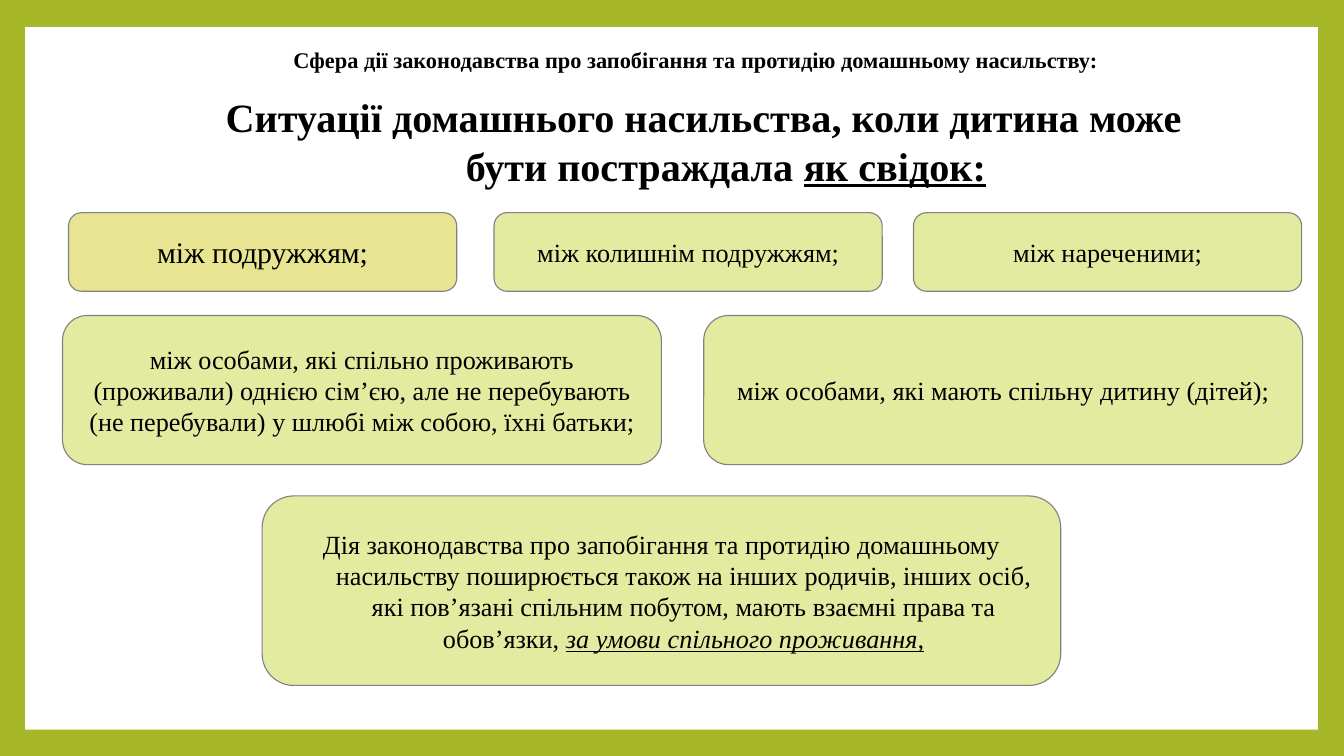
from pptx import Presentation
from pptx.dml.color import RGBColor
from pptx.enum.shapes import MSO_SHAPE
from pptx.enum.text import MSO_ANCHOR, PP_ALIGN
from pptx.util import Emu, Inches, Pt

# Content: each text is a list of (words, styles), b bold, i italic, u underlined
HEADINGS = [
    dict(text=[("Сфера дії законодавства про запобігання та протидію домашньому насильству:", "b")],
         box=(1.12, 0.4, 11.56, 0.39), size=16),
    dict(text=[("Ситуації домашнього насильства, коли дитина може бути постраждала ", "b"),
               ("як свідок:", "bu")],
         box=(1.98, 0.86, 10, 1.09), size=28.7),
]
# Rows of cards: top, height and width, then a left edge for each card
CARD_ROWS = [
    dict(top=2.11, height=0.78, width=3.85, cards=[
        dict(left=0.68, text=[("між подружжям;", "")], size=21.3, fill="E7E591"),
        dict(left=4.9, text=[("між колишнім подружжям;", "")], hanging=False),
        dict(left=9.06, text=[("між нареченими;", "")]),
    ]),
    dict(top=3.13, height=1.48, width=5.94, cards=[
        dict(left=0.62, hanging=False, text=[
            ("між особами, які спільно проживають (проживали) однією сім’єю, але не "
             "перебувають (не перебували) у шлюбі між собою, їхні батьки;", "")]),
        dict(left=6.98, text=[("між особами, які мають спільну дитину (дітей);", "")]),
    ]),
    dict(top=4.92, height=1.88, width=7.92, cards=[
        dict(left=2.6, text=[
            ("Дія законодавства про запобігання та протидію домашньому насильству "
             "поширюється також на інших родичів, інших осіб, які пов’язані спільним "
             "побутом, мають взаємні права та обов’язки, ", ""),
            ("за умови спільного проживання,", "iu")]),
    ]),
]
FRAME, PAPER, CARD, OUTLINE, INK = "A6B727", "FFFFFF", "E2EBA0", "818183", "000000"
FONT = "Times New Roman"
HANG = 0.44


def color(value):
    return RGBColor.from_string(value)


def write(shape, text, size=18.7, hanging=True, anchor=MSO_ANCHOR.MIDDLE):
    frame = shape.text_frame
    frame.word_wrap = True
    frame.vertical_anchor = anchor
    frame.margin_left = frame.margin_right = Inches(0.12)
    frame.margin_top = frame.margin_bottom = Inches(0.06)
    paragraph = frame.paragraphs[0]
    paragraph.alignment = PP_ALIGN.CENTER
    if hanging:
        paragraph.space_before = Pt(6)
        properties = paragraph._p.get_or_add_pPr()
        properties.set("marL", str(Inches(HANG)))
        properties.set("indent", str(-Inches(HANG)))
    for words, styles in text:
        run = paragraph.add_run()
        run.text = words
        font = run.font
        font.name, font.size = FONT, Pt(size)
        font.color.rgb = color(INK)
        font.bold, font.italic, font.underline = (mark in styles for mark in "biu")


def add_panel(slide, kind, box, fill, outline=None):
    panel = slide.shapes.add_shape(kind, *box)
    panel.shadow.inherit = False
    panel.fill.solid()
    panel.fill.fore_color.rgb = color(fill)
    if outline:
        panel.line.color.rgb = color(outline)
        panel.line.width = Pt(0.79)
    else:
        panel.line.fill.background()
    return panel


def main():
    deck = Presentation()
    deck.slide_width, deck.slide_height = Inches(13.33), Inches(7.5)
    slide = deck.slides.add_slide(deck.slide_layouts[6])

    # Green frame around white paper
    slide.background.fill.solid()
    slide.background.fill.fore_color.rgb = color(FRAME)
    paper = [Inches(n) for n in (0.25, 0.27, 12.82, 6.97)]
    add_panel(slide, MSO_SHAPE.RECTANGLE, paper, PAPER)

    # Headings
    for heading in HEADINGS:
        box = slide.shapes.add_textbox(*(Inches(n) for n in heading["box"]))
        write(box, heading["text"], size=heading["size"], anchor=MSO_ANCHOR.TOP)

    # Cards
    for row in CARD_ROWS:
        for card in row["cards"]:
            box = [Inches(n) for n in (card["left"], row["top"], row["width"], row["height"])]
            panel = add_panel(slide, MSO_SHAPE.ROUNDED_RECTANGLE, box,
                              card.get("fill", CARD), OUTLINE)
            write(panel, card["text"], size=card.get("size", 18.7),
                  hanging=card.get("hanging", True))

    deck.save("out.pptx")


if __name__ == "__main__":
    main()
